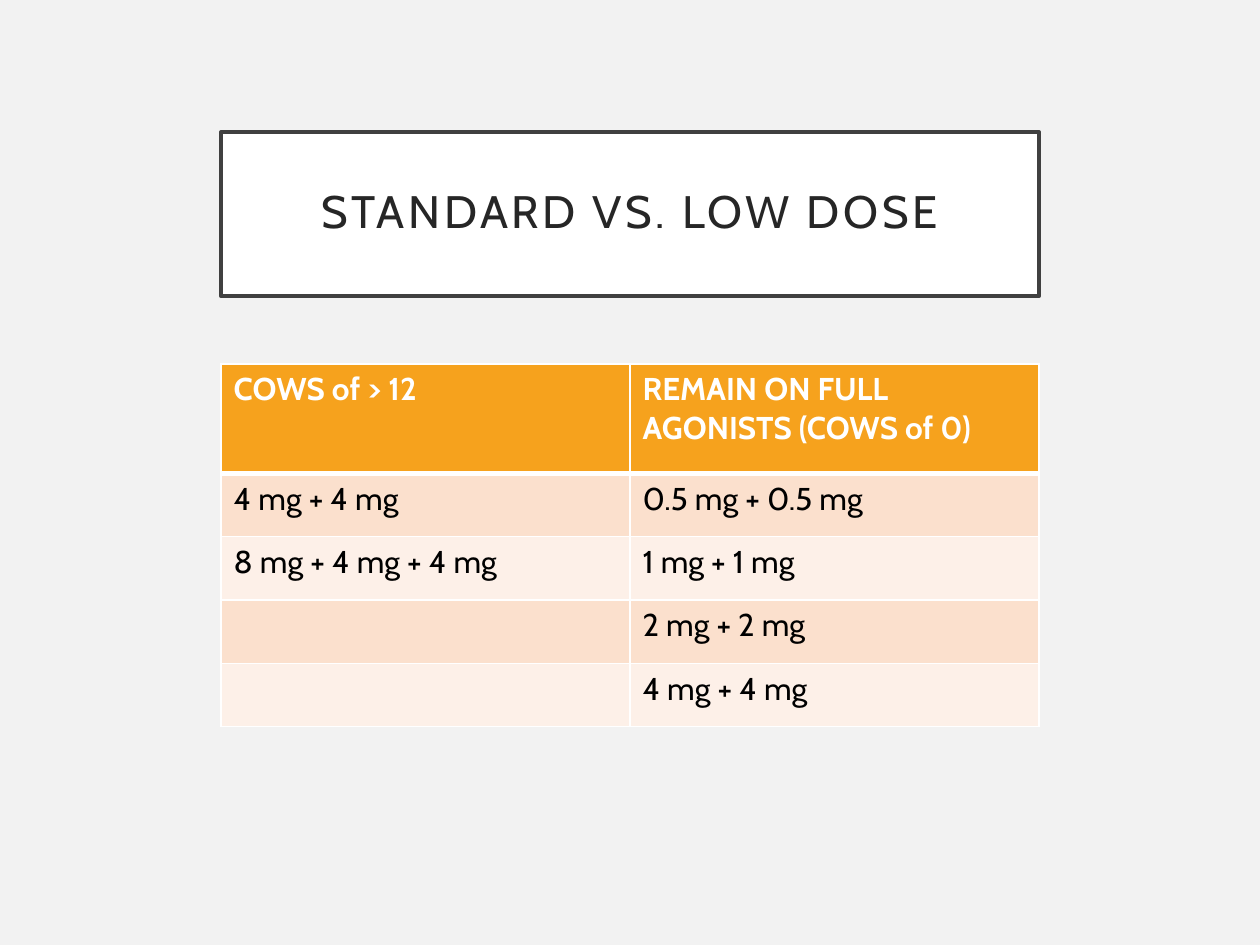
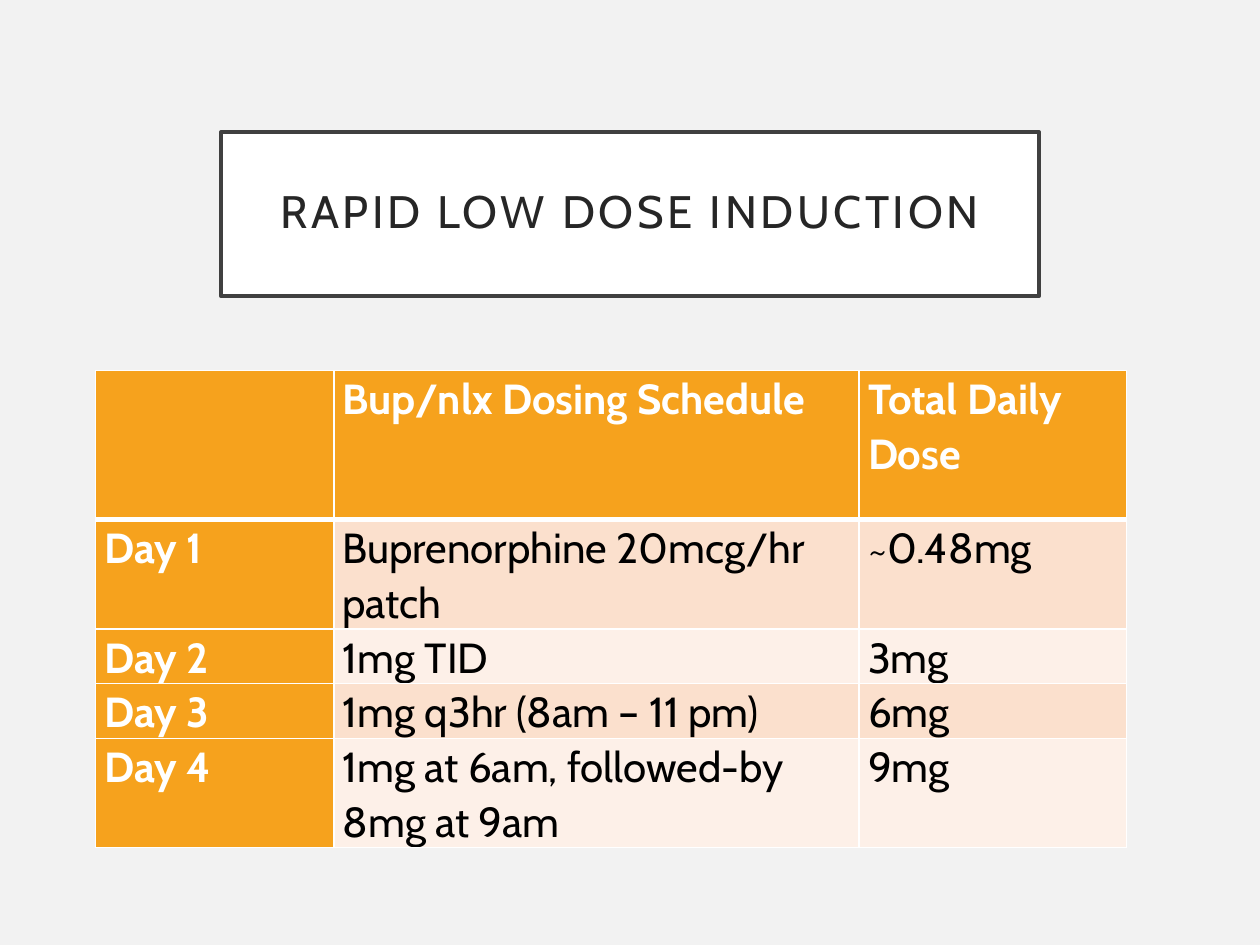
"""Build two slides that compare buprenorphine dosing schedules in tables."""
from dataclasses import dataclass

from lxml.etree import SubElement
from pptx import Presentation
from pptx.dml.color import RGBColor
from pptx.enum.text import MSO_ANCHOR, MSO_AUTO_SIZE, PP_ALIGN
from pptx.oxml.ns import qn
from pptx.util import Inches, Pt

WIDTH, HEIGHT = Inches(10), Inches(7.5)
FONT = "Cabin"
TITLE_LAYOUT = 5

BACKGROUND = RGBColor(0xF2, 0xF2, 0xF2)
WHITE = RGBColor(0xFF, 0xFF, 0xFF)
BLACK = RGBColor(0x00, 0x00, 0x00)
FRAME = RGBColor(0x40, 0x40, 0x40)
TITLE_TEXT = RGBColor(0x26, 0x26, 0x26)
ORANGE = RGBColor(0xF6, 0xA2, 0x1D)
BANDS = (RGBColor(0xFD, 0xF0, 0xE8), RGBColor(0xFB, 0xE0, 0xCD))


@dataclass(frozen=True)
class DoseTable:
    title: str
    left: float
    top: float
    columns: tuple[float, ...]
    row_heights: tuple[float, ...]
    rows: tuple[tuple[str, ...], ...]
    size: int
    margins: tuple[float, float]
    spacing: float = 1.0
    label_column: bool = False


STANDARD_VS_LOW = DoseTable(
    title="STANDARD VS. LOW DOSE",
    left=17.55, top=38.5,
    columns=(32.45, 32.45),
    row_heights=(11.6,) + (6.7,) * 4,
    rows=(
        ("COWS of > 12", "REMAIN ON FULL AGONISTS (COWS of 0)"),
        ("4 mg + 4 mg", "0.5 mg + 0.5 mg"),
        ("8 mg + 4 mg + 4 mg", "1 mg + 1 mg"),
        ("", "2 mg + 2 mg"),
        ("", "4 mg + 4 mg"),
    ),
    size=18, margins=(0.1, 0.05),
)
RAPID_INDUCTION = DoseTable(
    title="RAPID LOW DOSE INDUCTION",
    left=7.6, top=39.2,
    columns=(18.9, 41.7, 21.2),
    row_heights=(15.8, 11.5, 5.7, 5.7, 11.5),
    rows=(
        ("", "Bup/nlx Dosing Schedule", "Total Daily Dose"),
        ("Day 1", "Buprenorphine 20mcg/hr patch", "~0.48mg"),
        ("Day 2", "1mg TID", "3mg"),
        ("Day 3", "1mg q3hr (8am – 11 pm)", "6mg"),
        ("Day 4", "1mg at 6am, followed-by 8mg at 9am", "9mg"),
    ),
    size=24, margins=(0.07, 0), spacing=1.07, label_column=True,
)


def across(percent: float) -> int:
    """Return a share of the slide width."""
    return round(WIDTH * percent / 100)


def down(percent: float) -> int:
    """Return a share of the slide height."""
    return round(HEIGHT * percent / 100)


def style_runs(paragraph, size: int, color: RGBColor, bold: bool = False) -> None:
    """Format every run of a paragraph."""
    for run in paragraph.runs:
        run.font.name, run.font.size, run.font.bold = FONT, Pt(size), bold
        run.font.color.rgb = color


def draw_title(slide, text: str) -> None:
    """Place the framed, letter-spaced title."""
    title = slide.shapes.title
    title.left, title.top = across(17.55), down(14)
    title.width, title.height = across(64.9), down(17.33)
    title.fill.solid()
    title.fill.fore_color.rgb = WHITE
    title.line.color.rgb = FRAME
    title.line.width = Pt(2.5)
    frame = title.text_frame
    frame.text = text
    frame.word_wrap = True
    frame.auto_size = MSO_AUTO_SIZE.NONE
    frame.vertical_anchor = MSO_ANCHOR.MIDDLE
    frame.margin_left = frame.margin_right = Inches(0.2)
    frame.margin_top = frame.margin_bottom = Inches(0.2)
    paragraph = frame.paragraphs[0]
    paragraph.alignment = PP_ALIGN.CENTER
    paragraph.line_spacing = 0.9
    style_runs(paragraph, 26, TITLE_TEXT)
    for run in paragraph.runs:
        run._r.get_or_add_rPr().set("spc", "200")


def draw_borders(cell, row: int) -> None:
    """Outline a cell in white, thicker between header and body."""
    widths = {"L": 1, "R": 1, "T": 3 if row == 1 else 1, "B": 3 if row == 0 else 1}
    properties = cell._tc.get_or_add_tcPr()
    for side, width in widths.items():
        line = SubElement(properties, qn(f"a:ln{side}"), w=str(Pt(width)))
        fill = SubElement(line, qn("a:solidFill"))
        SubElement(fill, qn("a:srgbClr"), val=str(WHITE))


def draw_cell(cell, text: str, row: int, is_heading: bool, design: DoseTable) -> None:
    """Fill, outline and write one table cell."""
    draw_borders(cell, row)
    cell.fill.solid()
    cell.fill.fore_color.rgb = ORANGE if is_heading else BANDS[row % 2]
    side, edge = design.margins
    cell.margin_left = cell.margin_right = Inches(side)
    cell.margin_top = cell.margin_bottom = Inches(edge)
    cell.text_frame.text = text
    paragraph = cell.text_frame.paragraphs[0]
    paragraph.line_spacing = design.spacing
    style_runs(paragraph, design.size, WHITE if is_heading else BLACK, is_heading)


def draw_table(slide, design: DoseTable) -> None:
    """Add the dosing table."""
    table = slide.shapes.add_table(
        len(design.rows), len(design.columns), across(design.left), down(design.top),
        across(sum(design.columns)), down(sum(design.row_heights))).table
    table.first_col = design.label_column
    for column, width in zip(table.columns, design.columns):
        column.width = across(width)
    for row, height in zip(table.rows, design.row_heights):
        row.height = down(height)
    for row, texts in enumerate(design.rows):
        for column, text in enumerate(texts):
            is_heading = row == 0 or (design.label_column and column == 0)
            draw_cell(table.cell(row, column), text, row, is_heading, design)


def main() -> None:
    """Build and save the presentation."""
    presentation = Presentation()
    presentation.slide_width, presentation.slide_height = WIDTH, HEIGHT
    for design in (STANDARD_VS_LOW, RAPID_INDUCTION):
        slide = presentation.slides.add_slide(presentation.slide_layouts[TITLE_LAYOUT])
        slide.background.fill.solid()
        slide.background.fill.fore_color.rgb = BACKGROUND
        draw_title(slide, design.title)
        draw_table(slide, design)
    presentation.save("out.pptx")


if __name__ == "__main__":
    main()
